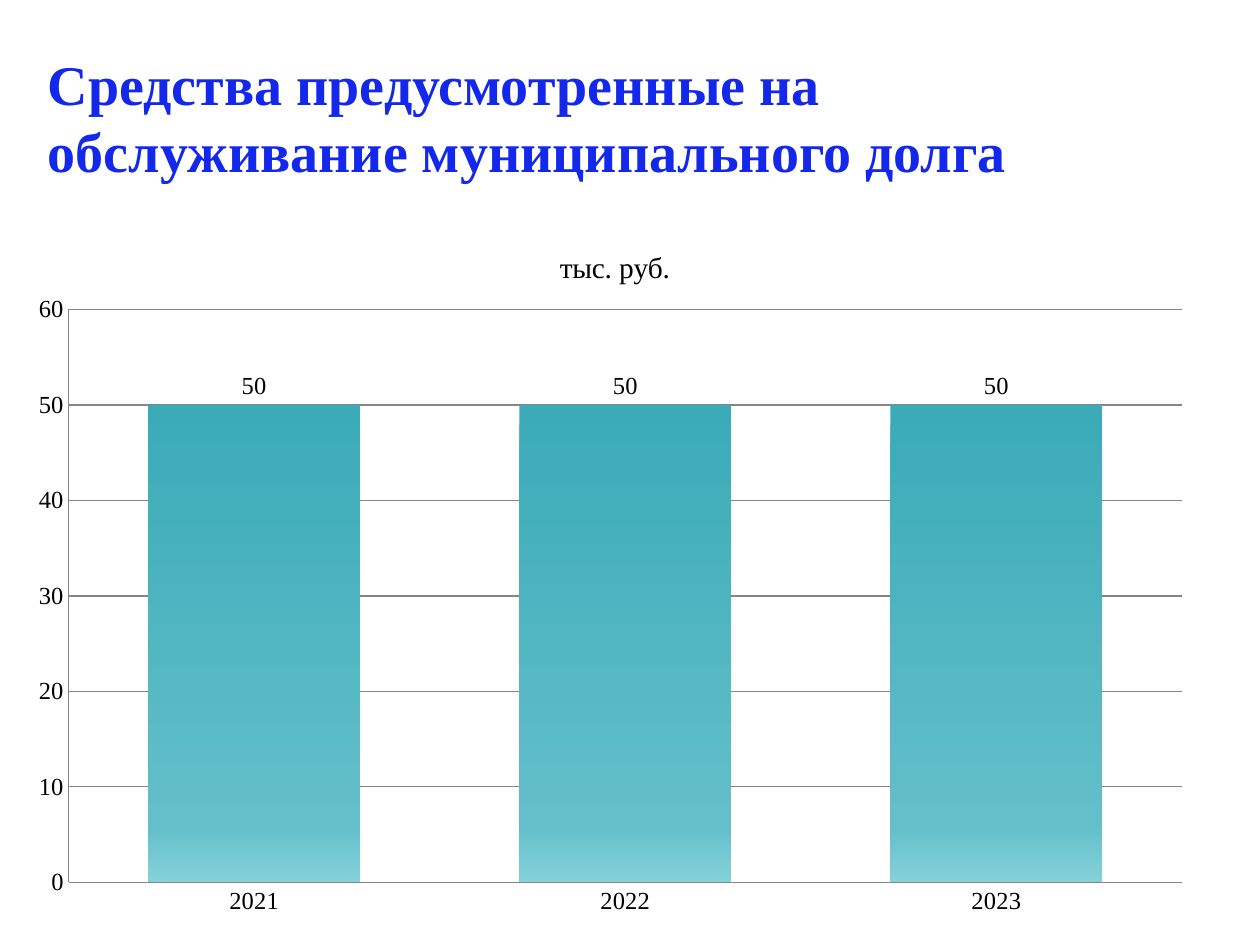
"""Build a slide with a column chart of municipal debt service funds."""
from copy import deepcopy

from lxml import etree
from pptx import Presentation
from pptx.chart.data import CategoryChartData
from pptx.dml.color import RGBColor
from pptx.enum.chart import XL_CHART_TYPE, XL_LABEL_POSITION, XL_TICK_MARK
from pptx.enum.text import MSO_ANCHOR, PP_ALIGN
from pptx.oxml.ns import qn
from pptx.util import Inches, Pt

COLUMN = XL_CHART_TYPE.COLUMN_CLUSTERED
ABOVE = XL_LABEL_POSITION.OUTSIDE_END
NO_TICK = XL_TICK_MARK.NONE
LEFT = PP_ALIGN.LEFT
MIDDLE = MSO_ANCHOR.MIDDLE

TITLE = "Средства предусмотренные на обслуживание муниципального долга"
UNIT = "тыс. руб."
FUNDS = {"2021": 50, "2022": 50, "2023": 50}
THEME = {
    "font": "Times New Roman", "head": 32, "unit": 16.8, "text": 14,
    "blue": "1328EB", "black": "000000", "grid": "868686",
    "bars": [(0, "3AABB7"), (0.88, "63BFCA"), (1, "84D1D9")],
}
WIDE, HIGH = 10, 7.5
HEAD_BOX = (0.028, 0.039, 0.922, 0.168)
CHART_BOX = (0.012, 0.227, 0.945, 0.756)
PLOT_BOX = {"x": 0.045, "y": 0.133, "w": 0.935, "h": 0.802}
UNIT_SPOT = {"x": 0.453, "y": 0.04}


def place(box):
    """Turn shares of the slide into lengths."""
    return [Inches(part * side) for part, side in zip(box, (WIDE, HIGH) * 2)]


def style(font, size, color, bold=False):
    """Set the theme font with a size and a colour."""
    font.name, font.size, font.bold = THEME["font"], Pt(size), bold
    font.color.rgb = RGBColor.from_string(color)


def lay_out(node, spot, index):
    """Fix a chart part at shares of the chart's size."""
    for old in node.findall(qn("c:layout")):
        node.remove(old)
    layout = etree.Element(qn("c:layout"))
    manual = etree.SubElement(layout, qn("c:manualLayout"))
    if "w" in spot:
        etree.SubElement(manual, qn("c:layoutTarget"), val="inner")
    for key in "xy":
        etree.SubElement(manual, qn(f"c:{key}Mode"), val="edge")
    for key, share in spot.items():
        etree.SubElement(manual, qn(f"c:{key}"), val=str(share))
    node.insert(index, layout)


def shade(fill, stops):
    """Fill from top to bottom with the given colour stops."""
    fill.gradient()
    fill.gradient_angle = 270
    group = fill._xPr.find(".//" + qn("a:gsLst"))
    group.append(deepcopy(group[-1]))
    for stop, (spot, color) in zip(fill.gradient_stops, stops):
        stop.position = spot
        stop.color.rgb = RGBColor.from_string(color)


def add_title(slide):
    """Fill and format the title."""
    title = slide.shapes.title
    title.left, title.top, title.width, title.height = place(HEAD_BOX)
    frame = title.text_frame
    frame.text, frame.word_wrap, frame.vertical_anchor = TITLE, True, MIDDLE
    para = frame.paragraphs[0]
    para.alignment = LEFT
    style(para.font, THEME["head"], THEME["blue"], True)


def add_funds(slide):
    """Draw the column chart."""
    data = CategoryChartData()
    data.categories = list(FUNDS)
    data.add_series("Series 1", list(FUNDS.values()))
    chart = slide.shapes.add_chart(COLUMN, *place(CHART_BOX), data).chart
    style(chart.font, THEME["text"], THEME["black"])
    chart.has_legend = False
    chart.has_title = True
    frame = chart.chart_title.text_frame
    frame.text = UNIT
    style(frame.paragraphs[0].font, THEME["unit"], THEME["black"])
    lay_out(chart.chart_title._element, UNIT_SPOT, 1)
    lay_out(chart._chartSpace.chart.plotArea, PLOT_BOX, 0)

    years, scale = chart.category_axis, chart.value_axis
    scale.minimum_scale, scale.maximum_scale, scale.major_unit = 0, 60, 10
    scale.has_major_gridlines = True
    for axis in (years, scale):
        axis.major_tick_mark = axis.minor_tick_mark = NO_TICK
    for part in (years, scale, scale.major_gridlines):
        part.format.line.width = Pt(0.75)
        part.format.line.color.rgb = RGBColor.from_string(THEME["grid"])

    plot = chart.plots[0]
    plot.gap_width, plot.vary_by_categories = 75, False
    plot.has_data_labels = True
    labels = plot.data_labels
    labels.show_value, labels.position = True, ABOVE
    style(labels.font, THEME["text"], THEME["black"])
    shade(plot.series[0].format.fill, THEME["bars"])


def main():
    """Build and save the deck."""
    deck = Presentation()
    deck.slide_width, deck.slide_height = Inches(WIDE), Inches(HIGH)
    slide = deck.slides.add_slide(deck.slide_layouts[5])
    add_title(slide)
    add_funds(slide)
    deck.save("out.pptx")


if __name__ == "__main__":
    main()
